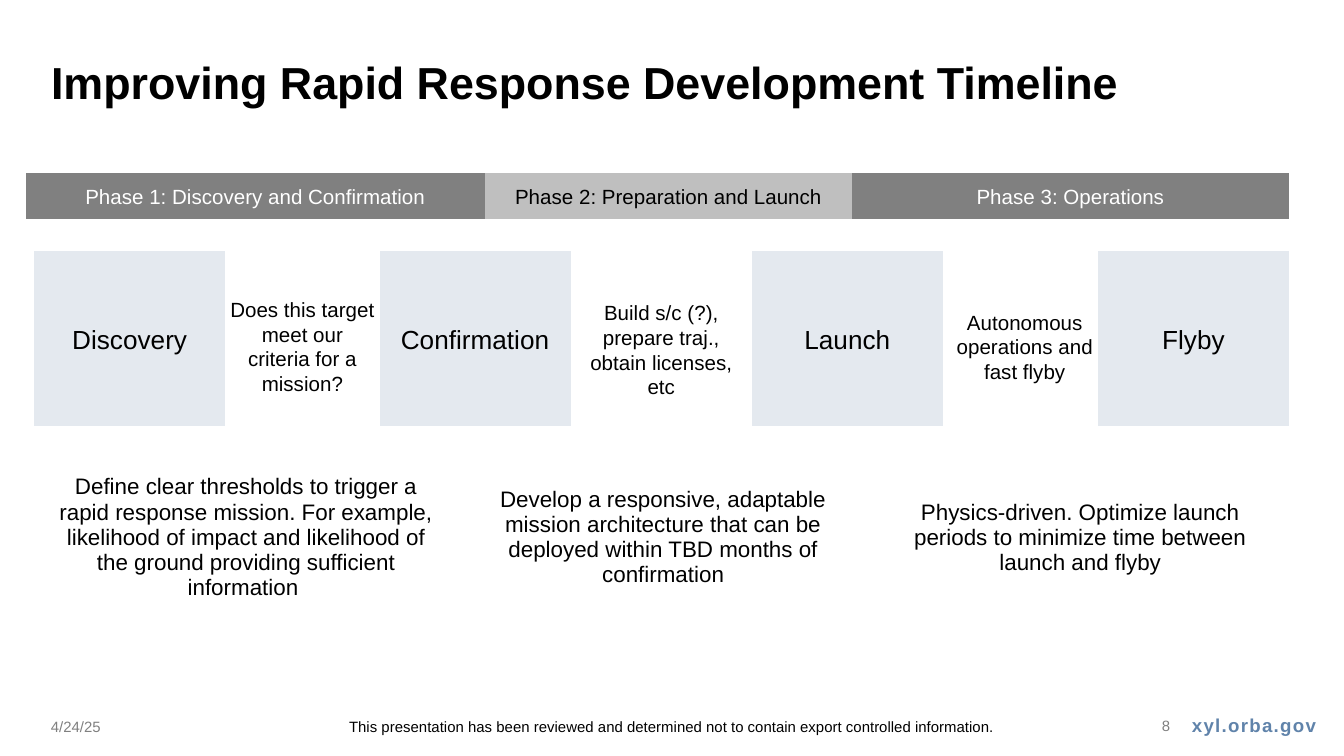
from dataclasses import dataclass

from pptx import Presentation
from pptx.dml.color import RGBColor
from pptx.enum.shapes import MSO_SHAPE
from pptx.enum.text import MSO_ANCHOR, MSO_AUTO_SIZE, PP_ALIGN
from pptx.util import Emu, Pt

BOX = MSO_SHAPE.FLOWCHART_PROCESS
LEFT, MID, RIGHT = PP_ALIGN.LEFT, PP_ALIGN.CENTER, PP_ALIGN.RIGHT
TOP, CENTER = MSO_ANCHOR.TOP, MSO_ANCHOR.MIDDLE
FIXED = MSO_AUTO_SIZE.NONE

PX = 4572  # EMU in one px, 200 px to the inch
COLORS = {
    "black": "000000",
    "white": "FFFFFF",
    "gray": "808080",
    "silver": "BFBFBF",
    "pale": "E4E9EF",
    "blue": "6083AA",
}


@dataclass
class Style:
    size: int
    color: str = "black"
    align: PP_ALIGN = MID
    anchor: MSO_ANCHOR = CENTER
    bold: bool = False


@dataclass
class Item:
    text: str
    x: int
    y: int
    w: int
    h: int
    style: Style
    fill: str = ""


def px(num: int) -> Emu:
    return Emu(num * PX)


def rgb(name: str) -> RGBColor:
    return RGBColor.from_string(COLORS[name])


def write(frame, text: str, style: Style) -> None:
    """Fill a text frame with one formatted paragraph."""
    para = frame.paragraphs[0]
    para.alignment = style.align
    run = para.add_run()
    run.text = text
    look = {"name": "Arial", "size": Pt(style.size), "bold": style.bold}
    for key, value in look.items():
        setattr(run.font, key, value)
    run.font.color.rgb = rgb(style.color)


def set_up(frame, style: Style) -> None:
    form = {"word_wrap": True, "auto_size": FIXED, "vertical_anchor": style.anchor}
    for key, value in form.items():
        setattr(frame, key, value)


def draw(slide, item: Item):
    """Draw a filled box, or a plain text box when there is no fill."""
    area = [px(n) for n in (item.x, item.y, item.w, item.h)]
    if item.fill:
        shape = slide.shapes.add_shape(BOX, *area)
        shape.shadow.inherit = False
        shape.fill.solid()
        shape.fill.fore_color.rgb = rgb(item.fill)
        shape.line.fill.background()
    else:
        shape = slide.shapes.add_textbox(*area)
    set_up(shape.text_frame, item.style)
    write(shape.text_frame, item.text, item.style)
    return shape


def draw_title(slide, text: str) -> None:
    title = slide.shapes.title
    place = {"left": 56, "top": 72, "width": 1862, "height": 94}
    for key, value in place.items():
        setattr(title, key, px(value))
    style = Style(24, align=LEFT, anchor=TOP, bold=True)
    set_up(title.text_frame, style)
    write(title.text_frame, text, style)


def draw_goals(slide, goals: list[str]) -> None:
    """Draw the one-row table of goals, without fills."""
    area = [px(n) for n in (56, 690, 1862, 219)]
    table = slide.shapes.add_table(1, len(goals), *area).table
    table.first_row = table.horz_banding = False
    for cell, text in zip(table.rows[0].cells, goals):
        cell.fill.background()
        cell.vertical_anchor = CENTER
        write(cell.text_frame, text, Style(12))


# Steps of the mission and the work between them
STEPS = [("Discovery", 51), ("Confirmation", 565), ("Launch", 1119), ("Flyby", 1634)]
NOTE = Style(11, anchor=TOP)
NOTES = [
    Item("Does this target meet our criteria for a mission?", 321, 432, 258, 168, NOTE),
    Item("Build s/c (?), prepare traj., obtain licenses, etc", 855, 437, 258, 168, NOTE),
    Item("Autonomous operations and fast flyby", 1396, 451, 258, 132, NOTE),
]

# Phases, laid end to end: text, width, fill, text color
PHASES = [
    ("Phase 1: Discovery and Confirmation", 684, "gray", "white"),
    ("Phase 2: Preparation and Launch", 546, "silver", "black"),
    ("Phase 3: Operations", 650, "gray", "white"),
]

GOALS = [
    "Define clear thresholds to trigger a rapid response mission. For example, "
    "likelihood of impact and likelihood of the ground providing sufficient information ",
    "Develop a responsive, adaptable mission architecture that can be deployed "
    "within TBD months of confirmation",
    "Physics-driven. Optimize launch periods to minimize time between launch and flyby",
]

# Footer
SITE = Item("xyl.orba.gov", 1708, 1033, 270, 92, Style(10, "blue", RIGHT, bold=True))
FOOT = [
    Item("4/24/25", 56, 1051, 312, 60, Style(8, "gray", LEFT)),
    Item(
        "This presentation has been reviewed and determined not to contain "
        "export controlled information.",
        367, 1051, 1266, 60, Style(8),
    ),
    Item("8", 1633, 1050, 128, 60, Style(8, "gray", RIGHT)),
]


def main() -> None:
    deck = Presentation()
    deck.slide_width, deck.slide_height = px(2000), px(1125)
    slide = deck.slides.add_slide(deck.slide_layouts[5])

    # Title and footer
    draw_title(slide, "Improving Rapid Response Development Timeline")
    site = draw(slide, SITE)
    site.text_frame.paragraphs[0].runs[0].font._element.set("spc", "70")
    for item in FOOT:
        draw(slide, item)

    # Step boxes
    for text, x in STEPS:
        draw(slide, Item(text, x, 374, 284, 260, Style(14), "pale"))

    # Phase bar
    x = 38
    for text, w, fill, color in PHASES:
        draw(slide, Item(text, x, 258, w, 68, Style(11, color), fill))
        x += w

    # Notes between steps, and goals
    for item in NOTES:
        draw(slide, item)
    draw_goals(slide, GOALS)

    deck.save("out.pptx")


if __name__ == "__main__":
    main()
